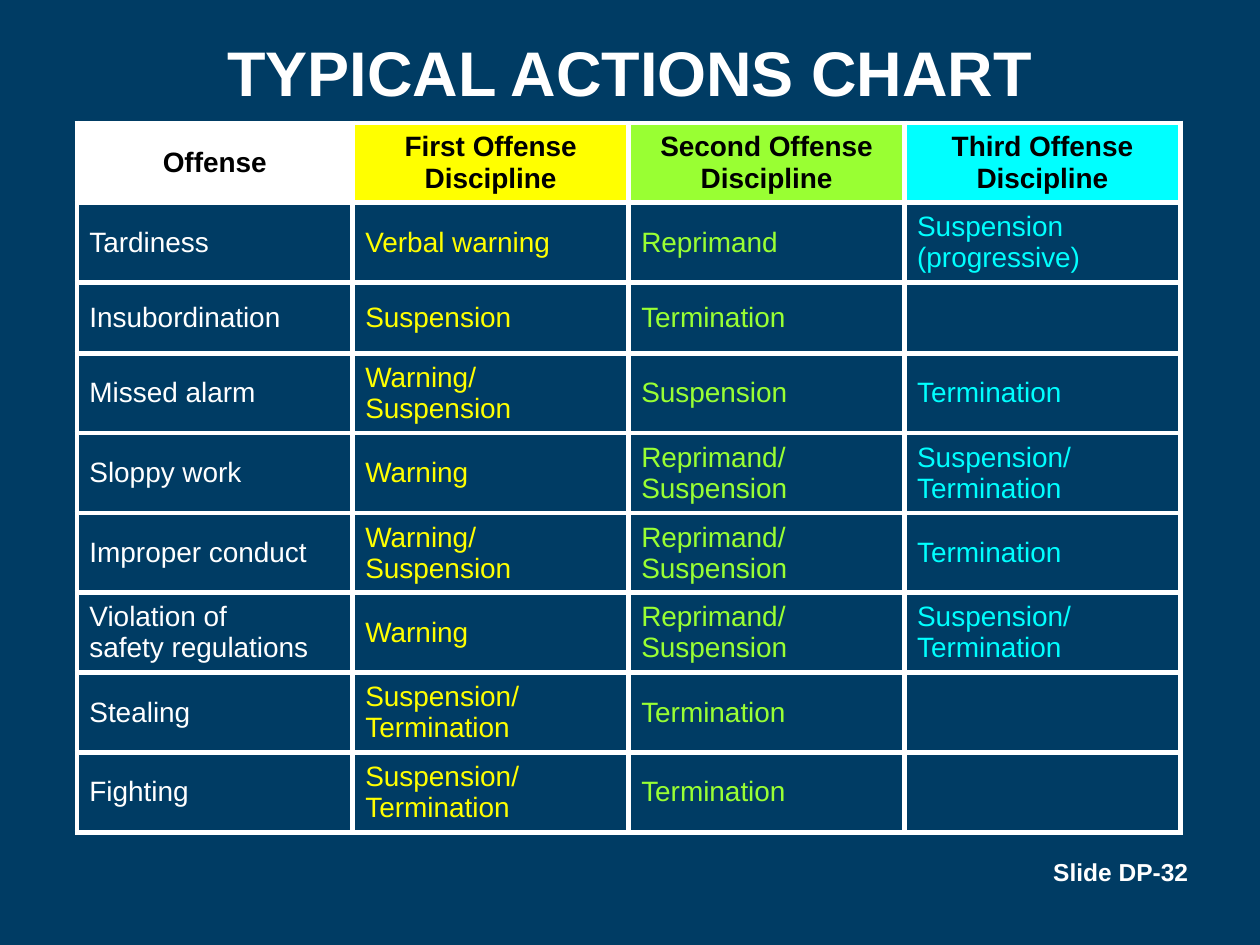
import pptx
import pptx.util
import pptx.dml.color
import pptx.enum.text
import pptx.oxml.ns
import lxml.etree

COLORS = {
    "navy": "003C64",
    "white": "FFFFFF",
    "black": "000000",
    "yellow": "FFFF00",
    "green": "99FF33",
    "cyan": "00FFFF",
}
ALIGN = pptx.enum.text.PP_ALIGN
ANCHOR = pptx.enum.text.MSO_ANCHOR

COLUMN_COLORS = ["white", "yellow", "green", "cyan"]
HEADINGS = [
    "Offense",
    "First Offense\nDiscipline",
    "Second Offense\nDiscipline",
    "Third Offense\nDiscipline",
]
ACTIONS = [
    ["Tardiness", "Verbal warning", "Reprimand", "Suspension\n(progressive)"],
    ["Insubordination", "Suspension", "Termination", ""],
    ["Missed alarm", "Warning/\nSuspension", "Suspension", "Termination"],
    ["Sloppy work", "Warning", "Reprimand/\nSuspension", "Suspension/\nTermination"],
    ["Improper conduct", "Warning/\nSuspension", "Reprimand/\nSuspension", "Termination"],
    ["Violation of\nsafety regulations", "Warning", "Reprimand/\nSuspension", "Suspension/\nTermination"],
    ["Stealing", "Suspension/\nTermination", "Termination", ""],
    ["Fighting", "Suspension/\nTermination", "Termination", ""],
]


def rgb(name):
    return pptx.dml.color.RGBColor.from_string(COLORS[name])


class ChartSlide:
    font = "Arial"
    cell_size = 16
    border_width = 3

    def __init__(self, deck, background):
        self.width, self.height = deck.slide_width, deck.slide_height
        self.slide = deck.slides.add_slide(deck.slide_layouts[6])
        self.slide.background.fill.solid()
        self.slide.background.fill.fore_color.rgb = rgb(background)

    def area(self, left, top, width, height):
        return (
            round(left * self.width),
            round(top * self.height),
            round(width * self.width),
            round(height * self.height),
        )

    def add_lines(self, frame, text, size, color, bold, align):
        for index, line in enumerate(text.split("\n")):
            paragraph = frame.add_paragraph() if index else frame.paragraphs[0]
            paragraph.alignment = align
            run = paragraph.add_run()
            run.text = line
            run.font.name = self.font
            run.font.size = pptx.util.Pt(size)
            run.font.bold = bold
            run.font.color.rgb = rgb(color)

    def label(self, text, box, size, align, anchor):
        frame = self.slide.shapes.add_textbox(*self.area(*box)).text_frame
        frame.word_wrap = True
        frame.vertical_anchor = anchor
        self.add_lines(frame, text, size, "white", True, align)

    def border(self, cell):
        properties = cell._tc.get_or_add_tcPr()
        qn = pptx.oxml.ns.qn
        for index, side in enumerate(("lnL", "lnR", "lnT", "lnB")):
            line = lxml.etree.Element(qn(f"a:{side}"), w=str(pptx.util.Pt(self.border_width)))
            fill = lxml.etree.SubElement(line, qn("a:solidFill"))
            lxml.etree.SubElement(fill, qn("a:srgbClr"), val=COLORS["white"])
            properties.insert(index, line)

    def cell(self, cell, text, fill, color, heading):
        cell.fill.solid()
        cell.fill.fore_color.rgb = rgb(fill)
        cell.vertical_anchor = ANCHOR.MIDDLE
        self.border(cell)
        if text:
            align = ALIGN.CENTER if heading else ALIGN.LEFT
            self.add_lines(cell.text_frame, text, self.cell_size, color, heading, align)

    def table(self, rows, box, row_height, short_row, short_height):
        shape = self.slide.shapes.add_table(len(rows), len(rows[0]), *self.area(*box))
        table = shape.table
        for row_index, row in enumerate(rows):
            share = short_height if row_index == short_row else row_height
            table.rows[row_index].height = round(share * self.height)
            heading = row_index == 0
            for column, (text, accent) in enumerate(zip(row, COLUMN_COLORS)):
                fill, color = (accent, "black") if heading else ("navy", accent)
                self.cell(table.cell(row_index, column), text, fill, color, heading)


def main():
    deck = pptx.Presentation()
    deck.slide_width = pptx.util.Inches(10)
    deck.slide_height = pptx.util.Inches(7.5)
    chart = ChartSlide(deck, "navy")
    chart.label("TYPICAL ACTIONS CHART", (0, -0.01, 1, 0.17), 36, ALIGN.CENTER, ANCHOR.MIDDLE)
    chart.table([HEADINGS] + ACTIONS, (0.061, 0.13, 0.876, 0.73), 0.082, 2, 0.075)
    chart.label("Slide DP-32", (0.745, 0.9, 0.208, 0.07), 14, ALIGN.RIGHT, ANCHOR.TOP)
    deck.save("out.pptx")


if __name__ == "__main__":
    main()
